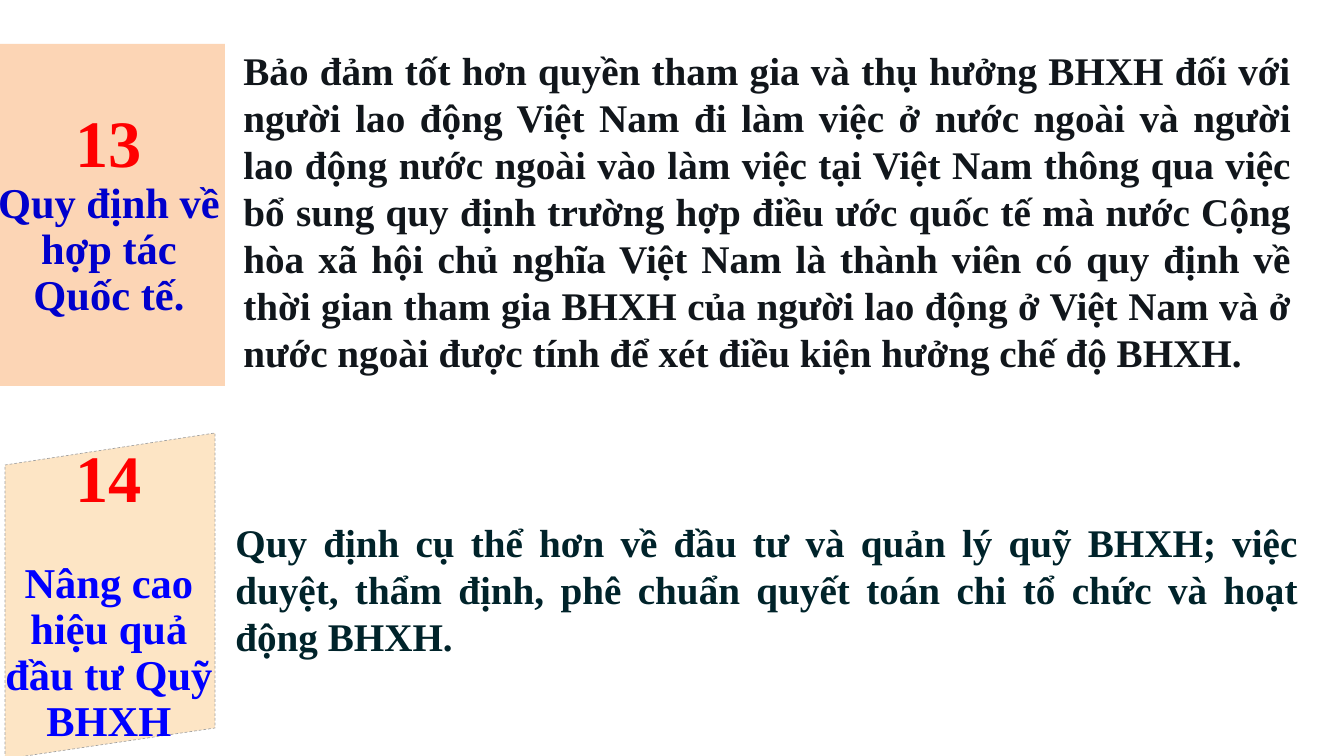
"""Builds the slide on points 13 and 14 of the social insurance reform."""
from dataclasses import dataclass

from pptx import Presentation, util as u
from pptx.dml.color import RGBColor
from pptx.enum import dml, text

POINTS = [
    {
        "num": "13",
        "label": "Quy định về hợp tác Quốc tế.",
        "ink": "0000CC",
        "gap": 0,
        "card": (-7, 44, 232, 342),
        "body": "Bảo đảm tốt hơn quyền tham gia và thụ hưởng BHXH đối với người lao động Việt Nam đi làm việc ở nước ngoài và người lao động nước ngoài vào làm việc tại Việt Nam thông qua việc bổ sung quy định trường hợp điều ước quốc tế mà nước Cộng hòa xã hội chủ nghĩa Việt Nam là thành viên có quy định về thời gian tham gia BHXH của người lao động ở Việt Nam và ở nước ngoài được tính để xét điều kiện hưởng chế độ BHXH.",
        "tone": "11161B",
        "box": (234, 42, 1067, 342),
    },
    {
        "num": "14",
        "label": "Nâng cao hiệu quả đầu tư Quỹ BHXH",
        "ink": "0000FF",
        "gap": 34,
        "card": (-7, 441, 232, 309),
        "body": "Quy định cụ thể hơn về đầu tư và quản lý quỹ BHXH; việc duyệt, thẩm định, phê chuẩn quyết toán chi tổ chức và hoạt động BHXH.",
        "tone": "00232A",
        "box": (226, 514, 1082, 152),
    },
]
SLANT = [(5, 465), (215, 433), (215, 728), (5, 759)]
SIZE = (1344, 756)
SCALE = 914400 / 95.5


@dataclass(frozen=True)
class Theme:
    """Colours, font and type sizes."""
    font: str = "Times New Roman"
    red: str = "FF0000"
    peach: str = "FCD5B5"
    cream: str = "FDE5C5"
    edge: str = "A0A0A0"
    num: float = 50
    label: float = 32
    body: float = 29.5


THEME = Theme()


def px(n):
    """Turn px into EMU."""
    return u.Emu(round(n * SCALE))


def place(shape, box):
    """Move and size a shape."""
    shape.left, shape.top, shape.width, shape.height = map(px, box)


def paint(shape, color):
    """Fill a shape with one colour."""
    shape.fill.solid()
    shape.fill.fore_color.rgb = RGBColor.from_string(color)


def write(para, words, size, color, align):
    """Write one bold paragraph."""
    para.text = words
    para.alignment = align
    font = para.font
    font.name, font.size, font.bold = THEME.font, u.Pt(size), True
    font.color.rgb = RGBColor.from_string(color)


def fill_card(shape, point):
    """Set the number and label of a point."""
    place(shape, point["card"])
    frame = shape.text_frame
    frame.word_wrap = True
    frame.auto_size = text.MSO_AUTO_SIZE.NONE
    frame.vertical_anchor = text.MSO_ANCHOR.MIDDLE
    frame.margin_left = frame.margin_right = 0
    frame.margin_top = frame.margin_bottom = 0
    rows = [(point["num"], THEME.num, THEME.red, 0),
            (point["label"], THEME.label, point["ink"], point["gap"])]
    for i, (words, size, color, gap) in enumerate(rows):
        para = frame.add_paragraph() if i else frame.paragraphs[0]
        write(para, words, size, color, text.PP_ALIGN.CENTER)
        para.line_spacing = 0.9
        para.space_before, para.space_after = u.Pt(gap), u.Pt(0)


def add_body(slide, point):
    """Add the text that explains a point."""
    shape = slide.shapes.add_textbox(*map(px, point["box"]))
    frame = shape.text_frame
    frame.word_wrap = True
    para = frame.paragraphs[0]
    write(para, point["body"], THEME.body, point["tone"], text.PP_ALIGN.JUSTIFY)
    para.space_before = para.space_after = u.Pt(8.4)


def add_slant(slide):
    """Add the slanted panel behind the second card."""
    pen = slide.shapes.build_freeform(*SLANT[0], scale=SCALE)
    pen.add_line_segments(SLANT[1:], close=True)
    panel = pen.convert_to_shape()
    panel.shadow.inherit = False
    paint(panel, THEME.cream)
    panel.line.color.rgb = RGBColor.from_string(THEME.edge)
    panel.line.width = u.Pt(0.5)
    panel.line.dash_style = dml.MSO_LINE.DASH


def main():
    """Build and save the slide."""
    deck = Presentation()
    deck.slide_width, deck.slide_height = map(px, SIZE)
    slide = deck.slides.add_slide(deck.slide_layouts[5])
    title = slide.shapes.title
    paint(title, THEME.peach)
    add_slant(slide)
    cards = [title, slide.shapes.add_textbox(0, 0, 0, 0)]
    for card, point in zip(cards, POINTS):
        fill_card(card, point)
        add_body(slide, point)
    deck.save("out.pptx")


if __name__ == "__main__":
    main()
